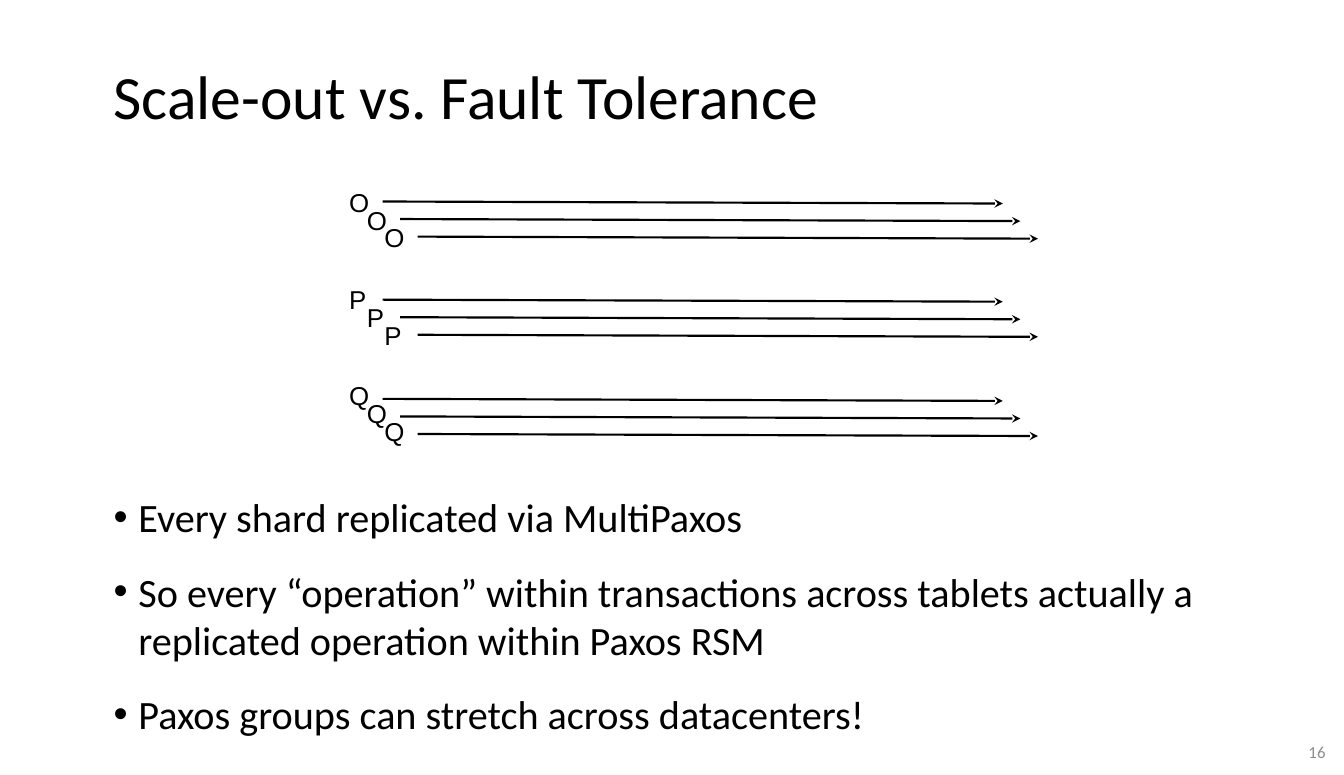
from dataclasses import dataclass

from lxml import etree
from pptx import Presentation
from pptx import util as u
from pptx.dml.color import RGBColor
from pptx.enum import shapes, text
from pptx.oxml import ns

SCALE = 9144  # EMU per px, 100 px to the inch
BLACK, GREY = "000000", "8C8C8C"
STEP = 17  # shift from one replica to the next
REPLICAS = 3


@dataclass
class Shard:
    name: str
    width: int
    top: int
    line: int


SHARDS = [
    Shard("O", 40, 176, 195),
    Shard("P", 37, 270, 290),
    Shard("Q", 40, 363, 386),
]
POINTS = [
    "Every shard replicated via MultiPaxos",
    "So every “operation” within transactions across tablets actually a "
    "replicated operation within Paxos RSM",
    "Paxos groups can stretch across datacenters!",
]


def px(n: int) -> u.Emu:
    return u.Emu(n * SCALE)


def color(code: str) -> RGBColor:
    return RGBColor.from_string(code)


def bullet(para) -> None:
    """Hang the paragraph from a round bullet."""
    props = para._p.get_or_add_pPr()
    props.set("marL", str(px(24)))
    props.set("indent", str(px(-24)))
    font = etree.SubElement(props, ns.qn("a:buFont"))
    font.set("typeface", "Arial")
    etree.SubElement(props, ns.qn("a:buChar")).set("char", "•")


def write(parent, lines: list[str], x: int, y: int, w: int, h: int, *,
          size: float, font: str = "Calibri", fill: str = BLACK,
          wrap: bool = True, middle: bool = False, right: bool = False,
          lead: float | None = None, gap: int | None = None,
          dots: bool = False) -> None:
    """Add a text box with one paragraph for each line."""
    frame = parent.shapes.add_textbox(px(x), px(y), px(w), px(h)).text_frame
    frame.word_wrap = wrap
    if not wrap:
        frame.auto_size = text.MSO_AUTO_SIZE.SHAPE_TO_FIT_TEXT
    if middle:
        frame.vertical_anchor = text.MSO_ANCHOR.MIDDLE
    for i, line in enumerate(lines):
        para = frame.add_paragraph() if i else frame.paragraphs[0]
        if right:
            para.alignment = text.PP_ALIGN.RIGHT
        if lead:
            para.line_spacing = lead
        if gap:
            para.space_before = u.Pt(gap)
        if dots:
            bullet(para)
        run = para.add_run()
        run.text = line
        run.font.size = u.Pt(size)
        run.font.name = font
        run.font.color.rgb = color(fill)


def arrow(parent, x: int, y: int, w: int, h: int) -> None:
    link = parent.shapes.add_connector(
        shapes.MSO_CONNECTOR.STRAIGHT, px(x), px(y), px(x + w), px(y + h))
    link.line.color.rgb = color(BLACK)
    link.line.width = u.Pt(1.5)
    tail = etree.SubElement(link.line._get_or_add_ln(), ns.qn("a:tailEnd"))
    tail.set("type", "stealth")
    etree.SubElement(link._element.spPr, ns.qn("a:effectLst"))


def draw(slide, shard: Shard) -> None:
    """Draw the shard's replicas as a cascade of labelled arrows."""
    for i in range(REPLICAS):
        shift = i * STEP
        group = slide.shapes.add_group_shape()
        arrow(group, 370 + shift, shard.line + shift, 600, 2)
        write(group, [shard.name], 328 + shift, shard.top + shift,
              shard.width, 40, size=18, font="Arial", wrap=False)


def main() -> None:
    deck = Presentation()
    deck.slide_width, deck.slide_height = px(1300), px(750)
    slide = deck.slides.add_slide(deck.slide_layouts[6])
    write(slide, ["Scale-out vs. Fault Tolerance"], 100, 24, 1121, 145,
          size=42.9, middle=True, lead=0.9)
    write(slide, POINTS, 100, 472, 1155, 263, size=28, gap=18, dots=True)
    for shard in SHARDS:
        draw(slide, shard)
    write(slide, ["16"], 1000, 708, 292, 40, size=11.7, fill=GREY,
          middle=True, right=True)
    deck.save("out.pptx")


if __name__ == "__main__":
    main()
